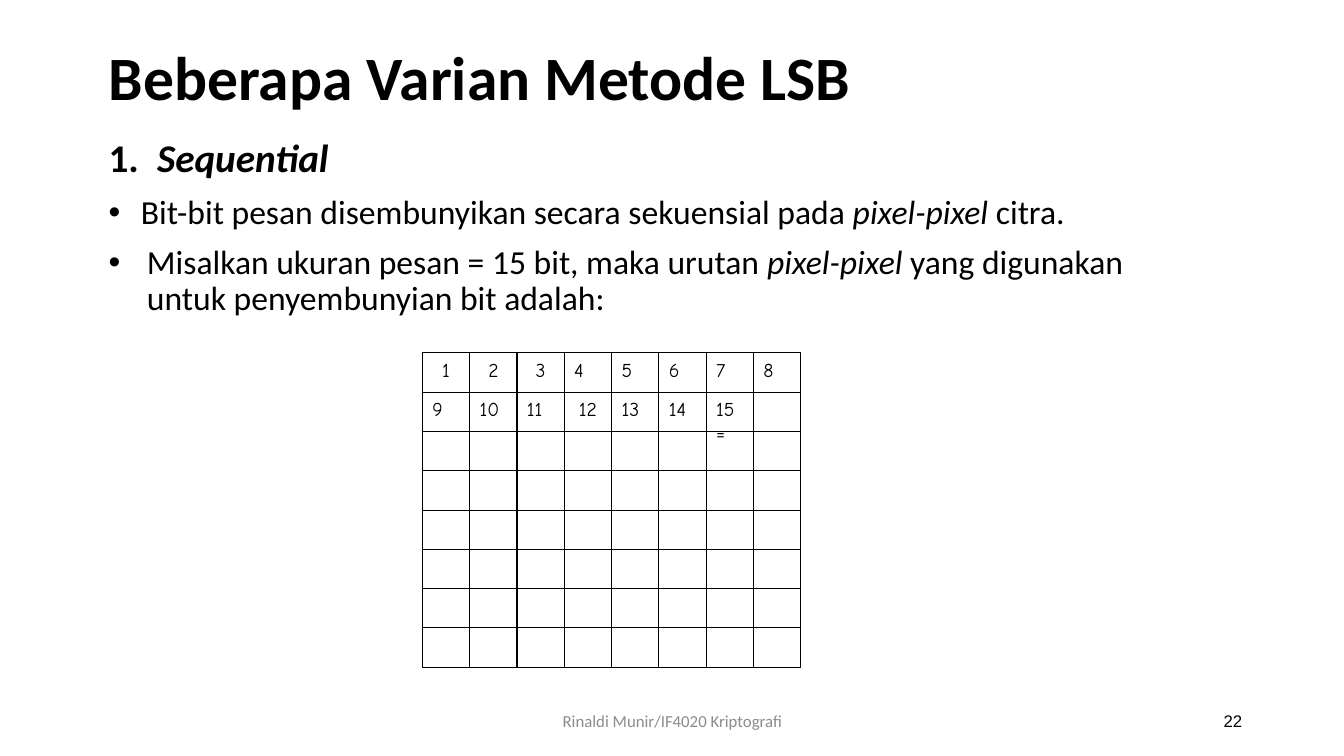
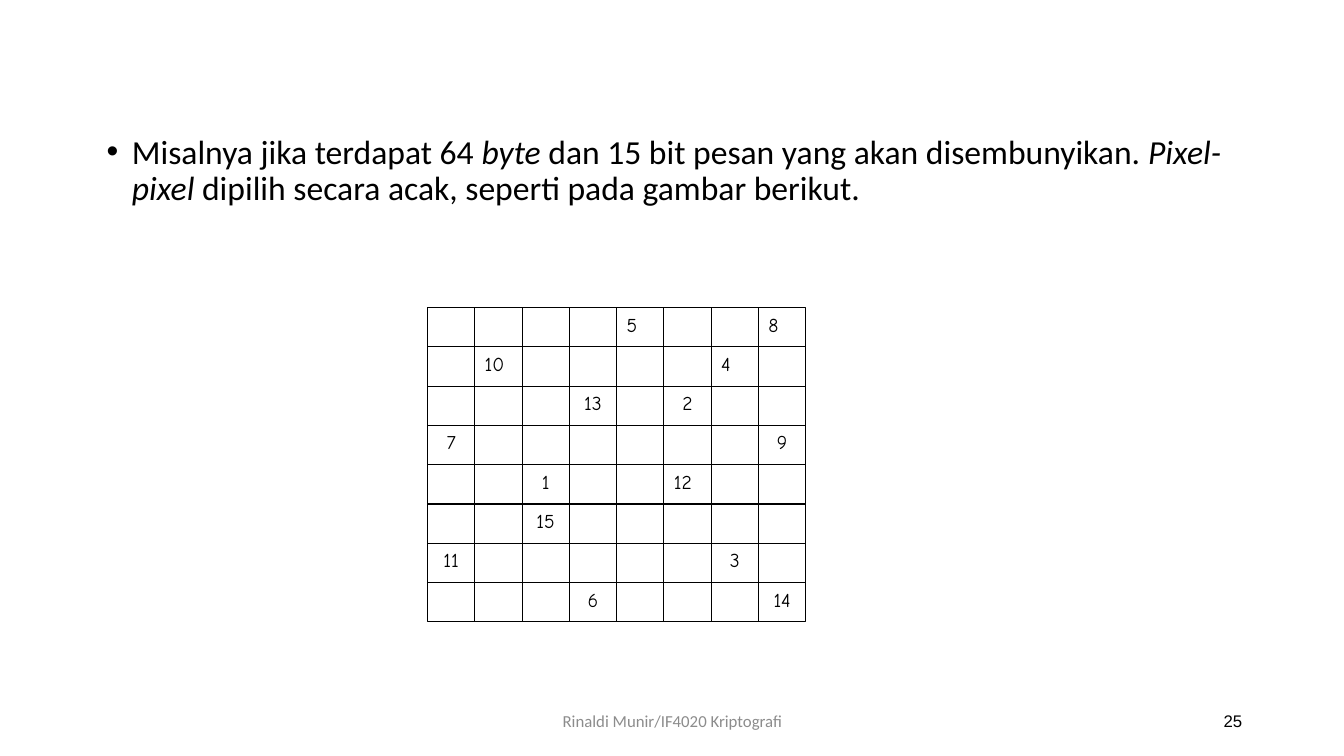
"""Build two slides on sequential and random LSB pixel order."""
from lxml import etree
from pptx import Presentation
from pptx import util as u
from pptx.dml import color
from pptx.enum import shapes, text
from pptx.oxml import ns

BLACK, GREY = "000000", "8C8C8C"
LEFT, CENTER, RIGHT = text.PP_ALIGN.LEFT, text.PP_ALIGN.CENTER, text.PP_ALIGN.RIGHT
TOP, MIDDLE = text.MSO_ANCHOR.TOP, text.MSO_ANCHOR.MIDDLE
GRID_SIZE, CELL_WIDTH, CELL_HEIGHT = 8, 0.469, 0.39
FOOTER = "Rinaldi Munir/IF4020 Kriptografi"

PAGES = [
    {
        "title": "Beberapa Varian Metode LSB",
        "body_at": (0.98, 1.33, 11.1, 2),
        "body": [
            ("1.\t*Sequential*", 28, True, 0.48, False),
            ("Bit-bit pesan disembunyikan secara sekuensial pada *pixel-pixel *citra.",
             24, False, 0.32, True),
            ("Misalkan ukuran pesan = 15 bit, maka urutan *pixel-pixel* yang digunakan "
             "untuk penyembunyian bit adalah:", 24, False, 0.38, True),
        ],
        "grid_at": (4.19, 3.5),
        "numbers": {
            (0, 0): "1", (0, 1): "2", (0, 2): "3", (0, 3): "4",
            (0, 4): "5", (0, 5): "6", (0, 6): "7", (0, 7): "8",
            (1, 0): "9", (1, 1): "10", (1, 2): "11", (1, 3): "12",
            (1, 4): "13", (1, 5): "14", (1, 6): "15=",
        },
        "centered": {"1", "2", "3", "12"},
        "number": "22",
    },
    {
        "title": None,
        "body_at": (0.96, 1.29, 11.25, 1.56),
        "body": [
            ("Misalnya jika terdapat 64 *byte* dan 15 bit pesan yang akan disembunyikan. "
             "*Pixel-pixel *dipilih secara acak, seperti pada gambar berikut.",
             24, False, 0.25, True),
        ],
        "grid_at": (4.24, 3.05),
        "numbers": {
            (0, 4): "5", (0, 7): "8", (1, 1): "10", (1, 6): "4",
            (2, 3): "13", (2, 5): "2", (3, 0): "7", (3, 7): "9",
            (4, 2): "1", (4, 5): "12", (5, 2): "15", (6, 0): "11",
            (6, 6): "3", (7, 3): "6", (7, 7): "14",
        },
        "centered": {"1", "2", "3", "6", "7", "9", "11", "13", "14", "15"},
        "number": "25",
    },
]


def rgb(value):
    return color.RGBColor.from_string(value)


def write(frame, para, words, size, font="Calibri", tint=BLACK, bold=False,
          align=LEFT, anchor=TOP):
    settings = {"word_wrap": True, "auto_size": text.MSO_AUTO_SIZE.NONE,
                "vertical_anchor": anchor}
    for name, value in settings.items():
        setattr(frame, name, value)
    para.alignment = align
    for index, part in enumerate(words.split("*")):
        if part:
            span = para.add_run()
            span.text = part
            look = {"name": font, "size": u.Pt(size), "bold": bold, "italic": index % 2 == 1}
            for name, value in look.items():
                setattr(span.font, name, value)
            span.font.color.rgb = rgb(tint)


deck = Presentation()
deck.slide_width, deck.slide_height = u.Inches(13.33), u.Inches(7.5)

for content in PAGES:
    page = deck.slides.add_slide(deck.slide_layouts[5 if content["title"] else 6])

    if content["title"]:
        title = page.shapes.title
        place = {"left": 0.98, "top": 0.24, "width": 8.25, "height": 1.12}
        for name, value in place.items():
            setattr(title, name, u.Inches(value))
        para = title.text_frame.paragraphs[0]
        para.line_spacing = 0.9
        write(title.text_frame, para, content["title"], 44, bold=True, anchor=MIDDLE)

    frame = page.shapes.add_textbox(*map(u.Inches, content["body_at"])).text_frame
    for index, (words, size, bold, indent, bulleted) in enumerate(content["body"]):
        para = frame.add_paragraph() if index else frame.paragraphs[0]
        props = para._p.get_or_add_pPr()
        props.set("marL", str(u.Inches(indent)))
        props.set("indent", str(-u.Inches(indent)))
        if bulleted:
            etree.SubElement(props, ns.qn("a:buFont")).set("typeface", "Arial")
            etree.SubElement(props, ns.qn("a:buChar")).set("char", "•")
        para.line_spacing = 0.9
        if index:
            para.space_before = u.Pt(10)
        write(frame, para, words, size, bold=bold)

    grid_left, grid_top = content["grid_at"]
    for row in range(GRID_SIZE):
        for column in range(GRID_SIZE):
            cell = page.shapes.add_shape(
                shapes.MSO_SHAPE.RECTANGLE,
                u.Inches(grid_left + column * CELL_WIDTH),
                u.Inches(grid_top + row * CELL_HEIGHT),
                u.Inches(CELL_WIDTH), u.Inches(CELL_HEIGHT))
            cell.shadow.inherit = False
            cell.fill.background()
            cell.line.color.rgb = rgb(BLACK)
            cell.line.width = u.Pt(0.75)
            number = content["numbers"].get((row, column))
            if number:
                align = CENTER if number in content["centered"] else LEFT
                write(cell.text_frame, cell.text_frame.paragraphs[0], number, 14,
                      font="Comic Neue", align=align)

    for words, left, width, font, tint, align in (
            (FOOTER, 4.42, 4.5, "Calibri", GREY, CENTER),
            (content["number"], 9.42, 3, "Arial", BLACK, RIGHT)):
        box = page.shapes.add_textbox(*map(u.Inches, (left, 6.95, width, 0.4)))
        write(box.text_frame, box.text_frame.paragraphs[0], words, 12, font=font,
              tint=tint, align=align, anchor=MIDDLE)

deck.save("out.pptx")
